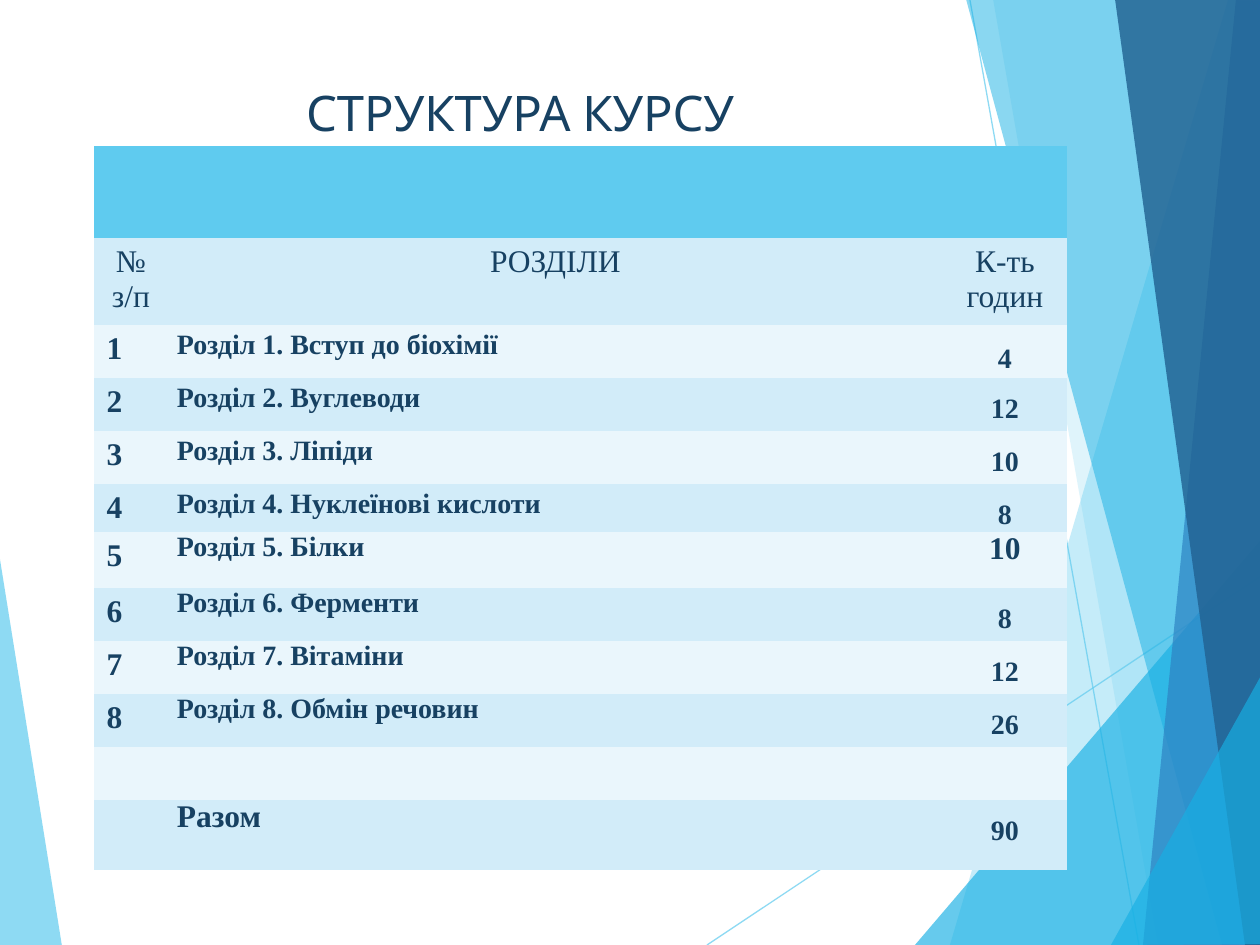
from typing import NamedTuple, Optional

from lxml.etree import SubElement
from pptx import Presentation
from pptx.dml.color import RGBColor
from pptx.enum.shapes import MSO_CONNECTOR
from pptx.enum.text import MSO_ANCHOR, MSO_AUTO_SIZE, PP_ALIGN as Align
from pptx.oxml.ns import qn
from pptx.util import Emu, Pt

SCALE = 914400 / 126  # EMU in one px
WIDTH, HEIGHT = 1260, 945

SKY = RGBColor(0x5F, 0xCB, 0xEF)
CYAN = RGBColor(0x17, 0xB0, 0xE4)
BLUE = RGBColor(0x2E, 0x83, 0xC3)
DEEP = RGBColor(0x22, 0x62, 0x92)
INK = RGBColor(0x17, 0x41, 0x62)
BAND_DARK = RGBColor(0xD2, 0xEC, 0xF9)
BAND_LIGHT = RGBColor(0xEA, 0xF6, 0xFC)

TITLE_FONT, TABLE_FONT = "Karla", "Times New Roman"
NO_STYLE = "{2D5ABB26-0587-4C30-8999-92F81FD0307C}"


class Facet(NamedTuple):
    points: list
    color: RGBColor
    opacity: int


class Ray(NamedTuple):
    start: tuple
    end: tuple


class CellText(NamedTuple):
    text: str
    size: int = 16
    bold: bool = True
    align: Optional[Align] = None
    line: Optional[float] = None
    after: Optional[int] = None
    tight: bool = True
    anchor: MSO_ANCHOR = MSO_ANCHOR.TOP


RAYS = [Ray((707, 945), (1261, 576)), Ray((970, 0), (1139, 945))]
LEFT_FACET = Facet([(-1, 553), (62, 946), (-1, 945)], SKY, 70)
RIGHT_FACETS = [
    Facet([(1228, 0), (950, 945), (1262, 946), (1261, 1)], SKY, 36),
    Facet([(993, -1), (1158, 945), (1261, 945), (1261, -1)], SKY, 20),
    Facet([(915, 945), (1260, 541), (1261, 945)], CYAN, 66),
    Facet([(966, -1), (1222, 945), (1261, 944), (1261, -1)], CYAN, 50),
    Facet([(1236, -1), (1143, 945), (1261, 945), (1260, -1)], BLUE, 70),
    Facet([(1115, -1), (1245, 945), (1262, 945), (1260, -1)], DEEP, 82),
    Facet([(1111, 945), (1262, 674), (1262, 944)], CYAN, 66),
]

COLUMNS = [74, 775, 124]
ROWS = [92, 87, 53, 53, 53, 48, 56, 53, 53, 53, 53, 70]
HEADINGS = ["№ з/п", "РОЗДІЛИ", "К-ть годин"]
SECTIONS = [
    ("Розділ 1. Вступ до біохімії", 4),
    ("Розділ 2. Вуглеводи", 12),
    ("Розділ 3. Ліпіди", 10),
    ("Розділ 4. Нуклеїнові кислоти", 8),
    ("Розділ 5. Білки", 10),
    ("Розділ 6. Ферменти", 8),
    ("Розділ 7. Вітаміни", 12),
    ("Розділ 8. Обмін речовин", 26),
]


def px(value: float) -> Emu:
    return Emu(round(value * SCALE))


def set_opacity(fill_parent, percent: int) -> None:
    color = fill_parent.find(".//" + qn("a:srgbClr"))
    SubElement(color, qn("a:alpha"), val=str(percent * 1000))


def draw_facet(page, facet: Facet) -> None:
    builder = page.shapes.build_freeform(*facet.points[0], scale=SCALE)
    builder.add_line_segments(facet.points[1:], close=True)
    shape = builder.convert_to_shape()
    shape.shadow.inherit = False
    shape.fill.solid()
    shape.fill.fore_color.rgb = facet.color
    set_opacity(shape._element.spPr, facet.opacity)
    shape.line.fill.background()


def draw_ray(page, ray: Ray) -> None:
    line = page.shapes.add_connector(
        MSO_CONNECTOR.STRAIGHT, *map(px, ray.start + ray.end))
    line.line.color.rgb = SKY
    line.line.width = Pt(0.75)
    set_opacity(line._element.spPr, 70)
    SubElement(line._element.spPr, qn("a:effectLst"))


def add_run(para, text: str, font: str, size: int, bold: bool = False) -> None:
    run = para.add_run()
    run.text = text
    run.font.name = font
    run.font.size = Pt(size)
    run.font.bold = bold
    run.font.color.rgb = INK


def write_cell(cell, content: CellText) -> None:
    if content.tight:
        cell.margin_left = cell.margin_right = px(9)
        cell.margin_top = cell.margin_bottom = 0
    cell.vertical_anchor = content.anchor
    para = cell.text_frame.paragraphs[0]
    if content.align is not None:
        para.alignment = content.align
    if content.line is not None:
        para.line_spacing = content.line
    if content.after is not None:
        para.space_after = Pt(content.after)
    add_run(para, content.text, TABLE_FONT, content.size, content.bold)


def section_cells(number: int, name: str, hours: int) -> list:
    label = CellText(name)
    if number <= 4:
        label = CellText(name, align=Align.JUSTIFY, line=1.15, after=10)
    amount = CellText(str(hours), align=Align.CENTER, line=1.5)
    if number == 1:
        amount = amount._replace(after=10, anchor=MSO_ANCHOR.MIDDLE)
    elif number == 5:
        amount = amount._replace(size=18, line=None)
    return [CellText(str(number), size=18, tight=False), label, amount]


def table_contents() -> list:
    headings = [CellText(text, 18, False, Align.CENTER, tight=False)
                for text in HEADINGS]
    sections = [section_cells(number, *section)
                for number, section in enumerate(SECTIONS, 1)]
    total = sum(hours for _, hours in SECTIONS)
    totals = [None, CellText("Разом", size=18),
              CellText(str(total), align=Align.CENTER, line=1.5)]
    blank = [None] * len(COLUMNS)
    return [blank, headings, *sections, blank, totals]


def draw_table(page) -> None:
    frame = page.shapes.add_table(
        len(ROWS), len(COLUMNS), px(94), px(146), px(sum(COLUMNS)), px(sum(ROWS)))
    table = frame.table
    table.first_row = table.horz_banding = False
    table._tbl.tblPr.find(qn("a:tableStyleId")).text = NO_STYLE
    for column, width in zip(table.columns, COLUMNS):
        column.width = px(width)
    for index, (height, contents) in enumerate(zip(ROWS, table_contents())):
        table.rows[index].height = px(height)
        band = BAND_DARK if index % 2 else BAND_LIGHT
        for cell, content in zip(table.rows[index].cells, contents):
            cell.fill.solid()
            cell.fill.fore_color.rgb = band if index else SKY
            if content:
                write_cell(cell, content)
    table.cell(0, 0).merge(table.cell(0, len(COLUMNS) - 1))


def write_title(page) -> None:
    title = page.shapes.title
    title.left, title.top, title.width, title.height = map(px, (205, 76, 630, 72))
    box = title.text_frame
    box.word_wrap = True
    box.auto_size = MSO_AUTO_SIZE.NONE
    box.vertical_anchor = MSO_ANCHOR.TOP
    para = box.paragraphs[0]
    para.alignment = Align.CENTER
    add_run(para, "СТРУКТУРА КУРСУ", TITLE_FONT, 28)


def main() -> None:
    deck = Presentation()
    deck.slide_width, deck.slide_height = px(WIDTH), px(HEIGHT)
    page = deck.slides.add_slide(deck.slide_layouts[5])

    # Background facets and rays
    draw_facet(page, LEFT_FACET)
    for ray in RAYS:
        draw_ray(page, ray)
    for facet in RIGHT_FACETS:
        draw_facet(page, facet)

    # Course table and heading
    draw_table(page)
    write_title(page)
    deck.save("out.pptx")


if __name__ == "__main__":
    main()
